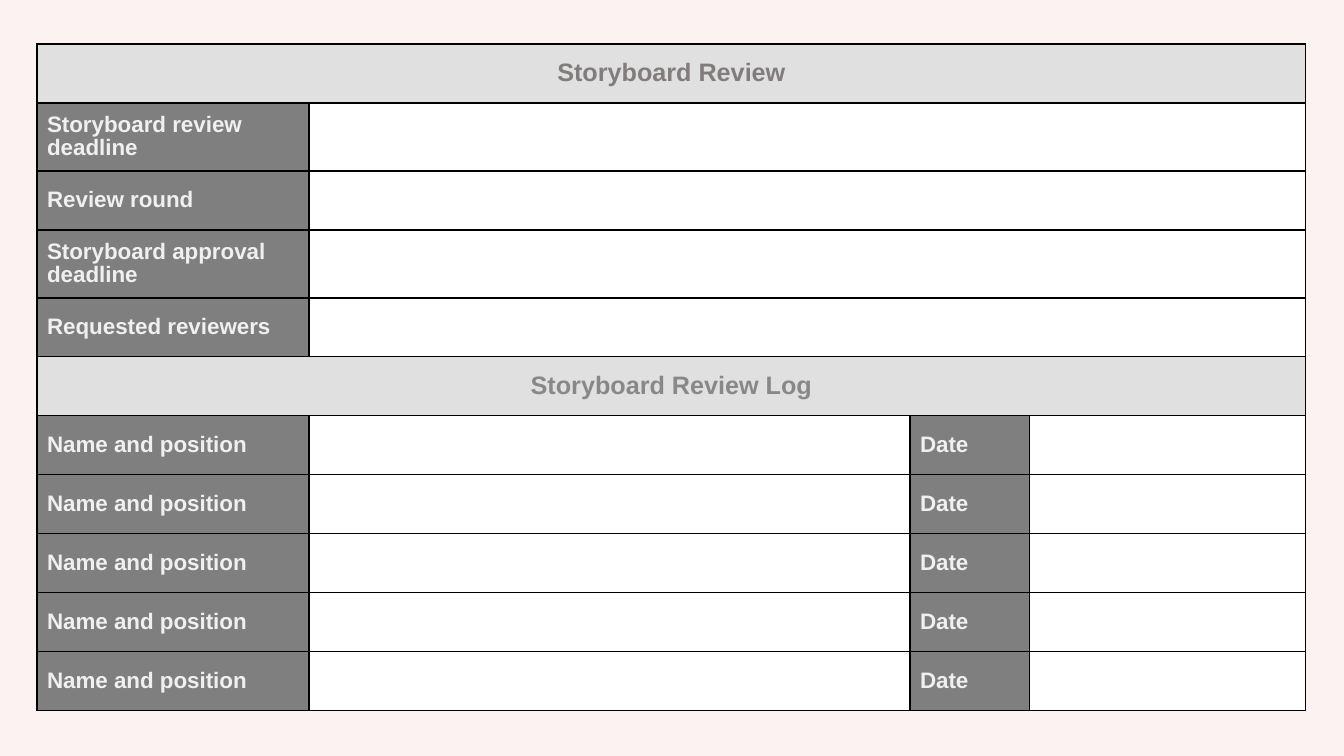
import pptx
import pptx.dml.color
import pptx.enum.text
import pptx.oxml
import pptx.oxml.ns
import pptx.util

RGBColor = pptx.dml.color.RGBColor
BACKGROUND = RGBColor(0xFA, 0xF3, 0xF1)
BORDER = RGBColor(0x00, 0x00, 0x00)
BAND_FILL = RGBColor(0xE0, 0xE0, 0xE0)
LABEL_FILL = RGBColor(0x7F, 0x7F, 0x7F)
ENTRY_FILL = RGBColor(0xFF, 0xFF, 0xFF)
REVIEW_TEXT = RGBColor(0x82, 0x7D, 0x7C)
LOG_TEXT = RGBColor(0x88, 0x88, 0x88)
LABEL_TEXT = RGBColor(0xF0, 0xF0, 0xF0)

SLIDE_WIDTH, SLIDE_HEIGHT = 1344, 756
EMU_PER_PX = 12192000 / SLIDE_WIDTH
TABLE_LEFT, TABLE_TOP = 37, 44
COLUMN_WIDTHS = [272, 601, 120, 276]
ROW_HEIGHT, TALL_ROW_HEIGHT = 59, 68

REVIEW_FIELDS = [
    ("Storyboard review deadline", TALL_ROW_HEIGHT),
    ("Review round", ROW_HEIGHT),
    ("Storyboard approval deadline", TALL_ROW_HEIGHT),
    ("Requested reviewers", ROW_HEIGHT),
]
LOG_ENTRIES = 5


def px(length):
    return pptx.util.Emu(round(length * EMU_PER_PX))


def set_borders(cell):
    properties = cell._tc.get_or_add_tcPr()
    for position, side in enumerate(("lnL", "lnR", "lnT", "lnB")):
        line = pptx.oxml.parse_xml(
            f'<a:{side} {pptx.oxml.ns.nsdecls("a")} w="12700"><a:solidFill>'
            f'<a:srgbClr val="{BORDER}"/></a:solidFill></a:{side}>'
        )
        properties.insert(position, line)


def write(cell, text, size, color, alignment):
    cell.text_frame.text = text
    paragraph = cell.text_frame.paragraphs[0]
    paragraph.alignment = alignment
    paragraph.line_spacing = 0.95
    font = paragraph.runs[0].font
    font.name = "Arial"
    font.size = pptx.util.Pt(size)
    font.bold = True
    font.color.rgb = color


def fill_cell(cell, color):
    cell.fill.solid()
    cell.fill.fore_color.rgb = color
    cell.vertical_anchor = pptx.enum.text.MSO_ANCHOR.MIDDLE


def add_label(cell, text):
    fill_cell(cell, LABEL_FILL)
    write(cell, text, 16, LABEL_TEXT, pptx.enum.text.PP_ALIGN.LEFT)


def add_band(table, row, text, color):
    """Turn a whole row into a section heading."""
    cell = table.cell(row, 0)
    cell.merge(table.cell(row, len(COLUMN_WIDTHS) - 1))
    fill_cell(cell, BAND_FILL)
    write(cell, text, 18, color, pptx.enum.text.PP_ALIGN.CENTER)


def add_review_table(slide):
    """Add the bordered grid with white cells, ready for bands and labels."""
    heights = [ROW_HEIGHT] + [height for _, height in REVIEW_FIELDS]
    heights += [ROW_HEIGHT] * (1 + LOG_ENTRIES)
    table = slide.shapes.add_table(
        len(heights), len(COLUMN_WIDTHS), px(TABLE_LEFT), px(TABLE_TOP),
        px(sum(COLUMN_WIDTHS)), px(sum(heights)),
    ).table
    table.first_row = False
    table.horz_banding = False
    for column, width in zip(table.columns, COLUMN_WIDTHS):
        column.width = px(width)
    for row, height in zip(table.rows, heights):
        row.height = px(height)
    for cell in table.iter_cells():
        fill_cell(cell, ENTRY_FILL)
        set_borders(cell)
    return table


def main():
    presentation = pptx.Presentation()
    presentation.slide_width = px(SLIDE_WIDTH)
    presentation.slide_height = px(SLIDE_HEIGHT)
    slide = presentation.slides.add_slide(presentation.slide_layouts[6])
    slide.background.fill.solid()
    slide.background.fill.fore_color.rgb = BACKGROUND

    table = add_review_table(slide)
    add_band(table, 0, "Storyboard Review", REVIEW_TEXT)
    for row, (field, _) in enumerate(REVIEW_FIELDS, start=1):
        add_label(table.cell(row, 0), field)
        table.cell(row, 1).merge(table.cell(row, 3))

    log_row = len(REVIEW_FIELDS) + 1
    add_band(table, log_row, "Storyboard Review Log", LOG_TEXT)
    for row in range(log_row + 1, log_row + 1 + LOG_ENTRIES):
        add_label(table.cell(row, 0), "Name and position")
        add_label(table.cell(row, 2), "Date")

    presentation.save("out.pptx")


if __name__ == "__main__":
    main()
